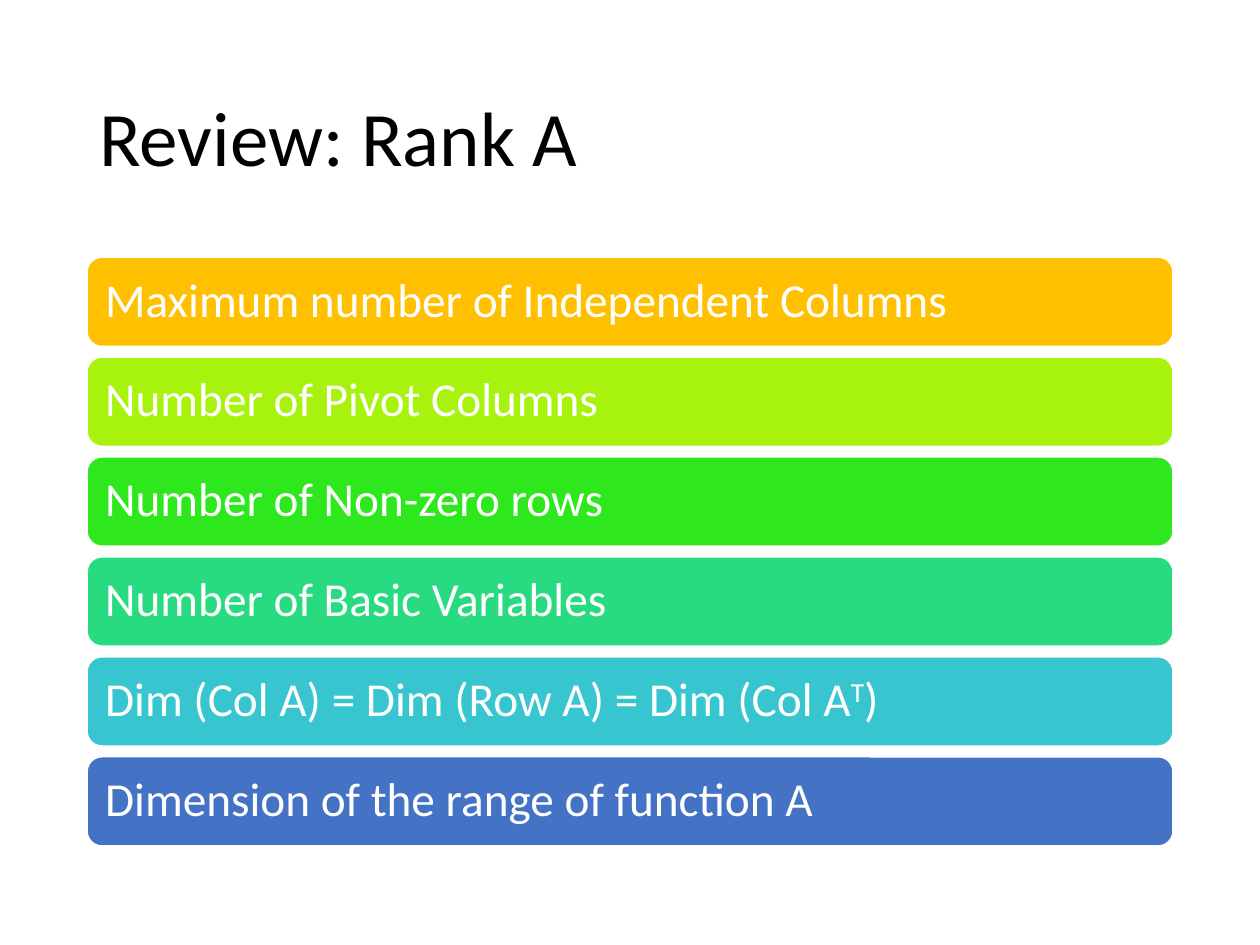
from pptx import Presentation
from pptx.dml.color import RGBColor
from pptx.enum.shapes import MSO_SHAPE
from pptx.enum.text import MSO_ANCHOR, PP_ALIGN
from pptx.util import Inches, Pt

ROUNDED = MSO_SHAPE.ROUNDED_RECTANGLE
MIDDLE = MSO_ANCHOR.MIDDLE
LEFT = PP_ALIGN.LEFT

FONT = "Calibri"
WHITE = "FFFFFF"
MARGIN = 0.69
CONTENT_WIDTH = 10 - 2 * MARGIN
FIRST_BAR_TOP = 2.04
BAR_HEIGHT = 0.71
BAR_PITCH = 0.793
BAR_INSET = 0.11

BARS = [
    (["Maximum number of Independent Columns"], "FFC000"),
    (["Number of Pivot Columns"], "A7F30E"),
    (["Number of Non-zero rows"], "2EE71C"),
    (["Number of Basic Variables"], "29DB80"),
    (["Dim (Col A) = Dim (Row A) = Dim (Col A", "T", ")"], "37C6CF"),
    (["Dimension of the range of function A"], "4472C4"),
]


def color(hex_string):
    """Turn a hex string into a colour."""
    return RGBColor.from_string(hex_string)


def write_text(shape, pieces, size, hex_string):
    """Write one left-aligned line; every second piece is a superscript."""
    frame = shape.text_frame
    frame.word_wrap = True
    frame.vertical_anchor = MIDDLE
    paragraph = frame.paragraphs[0]
    paragraph.alignment = LEFT
    paragraph.line_spacing = 0.9
    for index, piece in enumerate(pieces):
        run = paragraph.add_run()
        run.text = piece
        run.font.name = FONT
        run.font.size = Pt(size)
        run.font.color.rgb = color(hex_string)
        if index % 2:
            run.font._element.set("baseline", "30000")


def add_title(slide, text):
    """Add the slide title."""
    title = slide.shapes.add_textbox(
        Inches(MARGIN), Inches(0.4), Inches(CONTENT_WIDTH), Inches(1.45))
    write_text(title, [text], 44, "000000")


def add_bar(slide, row, pieces, fill):
    """Add a rounded bar with its text in the given row."""
    bar = slide.shapes.add_shape(
        ROUNDED, Inches(MARGIN), Inches(FIRST_BAR_TOP + row * BAR_PITCH),
        Inches(CONTENT_WIDTH), Inches(BAR_HEIGHT))
    bar.shadow.inherit = False
    bar.fill.solid()
    bar.fill.fore_color.rgb = color(fill)
    bar.line.color.rgb = color(WHITE)
    bar.line.width = Pt(1)
    frame = bar.text_frame
    frame.margin_left = frame.margin_right = Inches(BAR_INSET)
    frame.margin_top = frame.margin_bottom = Inches(BAR_INSET)
    write_text(bar, pieces, 27, WHITE)


def main():
    """Build the slide and save it."""
    presentation = Presentation()
    presentation.slide_width = Inches(10)
    presentation.slide_height = Inches(7.5)
    slide = presentation.slides.add_slide(presentation.slide_layouts[6])
    add_title(slide, "Review: Rank A")
    for row, (pieces, fill) in enumerate(BARS):
        add_bar(slide, row, pieces, fill)
    presentation.save("out.pptx")


if __name__ == "__main__":
    main()
